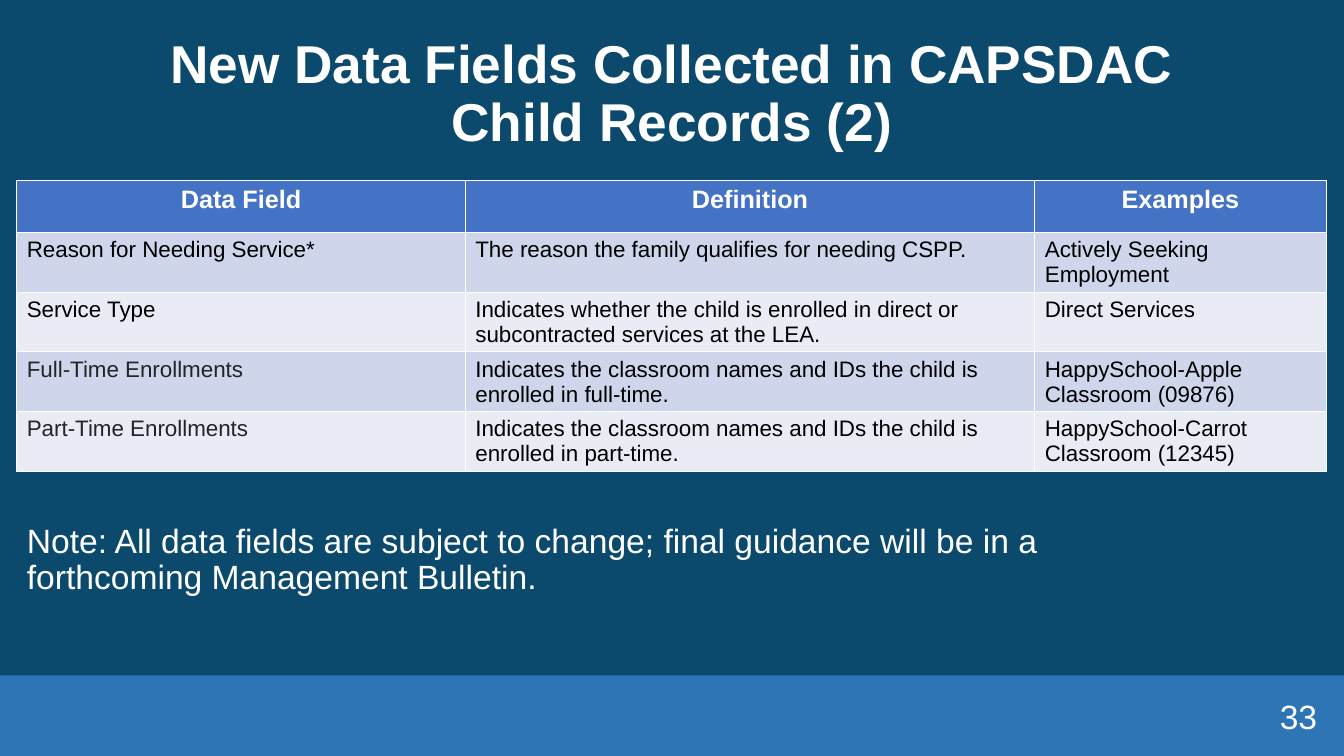
from lxml.etree import SubElement
from pptx import Presentation
from pptx.dml.color import RGBColor
from pptx.enum.shapes import MSO_SHAPE
from pptx.enum.text import MSO_ANCHOR, MSO_AUTO_SIZE, PP_ALIGN
from pptx.oxml.ns import qn
from pptx.util import Pt

NAVY = RGBColor(0x0C, 0x4A, 0x6D)
BLUE = RGBColor(0x2E, 0x75, 0xB6)
HEAD = RGBColor(0x44, 0x72, 0xC4)
BANDS = [RGBColor(0xCF, 0xD5, 0xEA), RGBColor(0xE9, 0xEB, 0xF5)]
WHITE = RGBColor(0xFF, 0xFF, 0xFF)
BLACK = RGBColor(0, 0, 0)
GREY = RGBColor(0x21, 0x25, 0x29)

LEFT, WIDE = 12, 936
COLS = [320.4, 406.8, 208]
HEAD_H, ROW_H = 37, 42.7
ROWS = [
    ("Data Field", "Definition", "Examples"),
    ("Reason for Needing Service*",
     "The reason the family qualifies for needing CSPP.",
     "Actively Seeking Employment"),
    ("Service Type",
     "Indicates whether the child is enrolled in direct or subcontracted "
     "services at the LEA.",
     "Direct Services"),
    ("Full-Time Enrollments",
     "Indicates the classroom names and IDs the child is enrolled in full-time.",
     "HappySchool-Apple Classroom (09876)"),
    ("Part-Time Enrollments",
     "Indicates the classroom names and IDs the child is enrolled in part-time.",
     "HappySchool-Carrot Classroom (12345)"),
]


def style(item, form):
    for name, value in form.items():
        setattr(item, name, value)


def write(frame, text, size, color, bold=False, **form):
    """Fill a text frame; form holds paragraph formats."""
    frame.text = text
    para = frame.paragraphs[0]
    style(para, form)
    for run in para.runs:
        style(run.font, {"name": "Arial", "size": Pt(size), "bold": bold})
        run.font.color.rgb = color


def place(shape, left, top, width, height, anchor):
    box = {"left": left, "top": top, "width": width, "height": height}
    style(shape, {name: Pt(value) for name, value in box.items()})
    style(shape.text_frame, {"word_wrap": True, "vertical_anchor": anchor,
                             "auto_size": MSO_AUTO_SIZE.NONE})


def clear_bullet(para):
    props = para._p.get_or_add_pPr()
    props.set("marL", "0")
    props.set("indent", "0")
    SubElement(props, qn("a:buNone"))


def add_band(slide):
    band = slide.shapes.add_shape(
        MSO_SHAPE.RECTANGLE, 0, Pt(482.4), Pt(960), Pt(57.6))
    band.shadow.inherit = False
    band.fill.solid()
    band.fill.fore_color.rgb = BLUE
    band.line.fill.background()


def add_title(slide):
    title = slide.shapes.title
    place(title, LEFT, 16, WIDE, 104, MSO_ANCHOR.MIDDLE)
    write(title.text_frame,
          "New Data Fields Collected in CAPSDAC\vChild Records (2)",
          38, WHITE, True, alignment=PP_ALIGN.CENTER, line_spacing=0.9)


def add_note(slide):
    note = slide.placeholders[1]
    place(note, LEFT, 371, 765, 80, MSO_ANCHOR.TOP)
    write(note.text_frame,
          "Note: All data fields are subject to change; final guidance will "
          "be in a forthcoming Management Bulletin.",
          24, WHITE, line_spacing=0.9, space_before=Pt(10))
    clear_bullet(note.text_frame.paragraphs[0])


def add_number(slide):
    box = slide.shapes.add_textbox(0, 0, 0, 0)
    place(box, 732, 497, 216, 29, MSO_ANCHOR.MIDDLE)
    write(box.text_frame, "33", 24, WHITE, alignment=PP_ALIGN.RIGHT)


def add_border(cell):
    props = cell._tc.get_or_add_tcPr()
    for spot, side in enumerate(("a:lnL", "a:lnR", "a:lnT", "a:lnB")):
        line = props.makeelement(qn(side), {"w": str(Pt(0.75))})
        fill = SubElement(line, qn("a:solidFill"))
        SubElement(fill, qn("a:srgbClr"), val=str(WHITE))
        props.insert(spot, line)


def fill_cell(cell, text, row, col):
    cell.fill.solid()
    if row == 0:
        cell.fill.fore_color.rgb = HEAD
        write(cell.text_frame, text, 18, WHITE, True,
              alignment=PP_ALIGN.CENTER)
    else:
        cell.fill.fore_color.rgb = BANDS[(row - 1) % 2]
        color = GREY if row > 2 and col == 0 else BLACK
        write(cell.text_frame, text, 16, color)
    cell.margin_bottom = Pt(2)
    add_border(cell)


def add_grid(slide):
    high = HEAD_H + ROW_H * (len(ROWS) - 1)
    table = slide.shapes.add_table(
        len(ROWS), len(COLS), Pt(LEFT), Pt(129), Pt(WIDE), Pt(high)).table
    for col, width in zip(table.columns, COLS):
        col.width = Pt(width)
    for row, texts in enumerate(ROWS):
        table.rows[row].height = Pt(ROW_H if row else HEAD_H)
        for col, text in enumerate(texts):
            fill_cell(table.cell(row, col), text, row, col)


def main():
    deck = Presentation()
    style(deck, {"slide_width": Pt(960), "slide_height": Pt(540)})
    slide = deck.slides.add_slide(deck.slide_layouts[1])
    slide.background.fill.solid()
    slide.background.fill.fore_color.rgb = NAVY
    add_band(slide)
    add_title(slide)
    add_grid(slide)
    add_note(slide)
    add_number(slide)
    deck.save("out.pptx")


if __name__ == "__main__":
    main()
